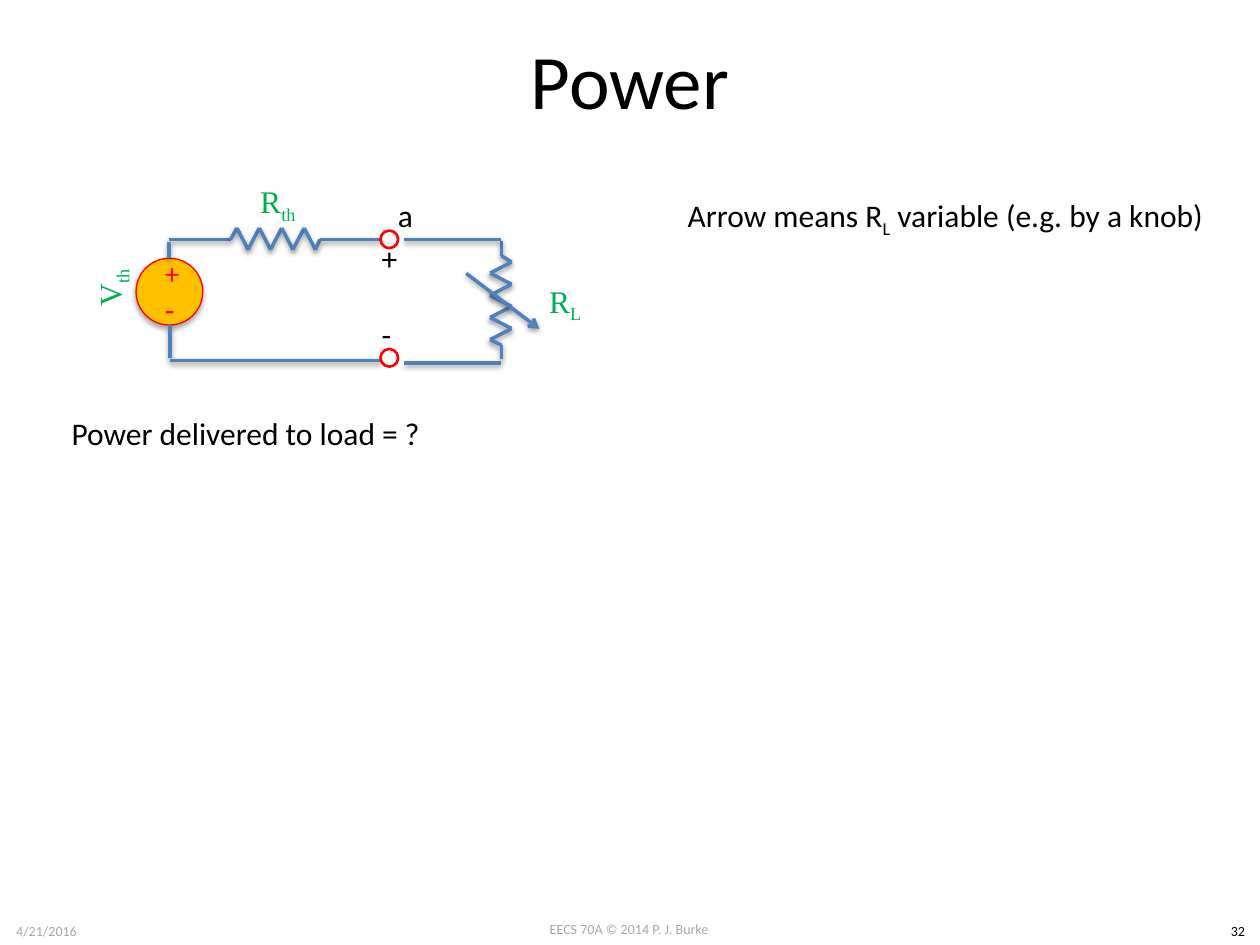
from lxml import etree
from pptx import Presentation
from pptx.dml.color import RGBColor
from pptx.enum.shapes import MSO_CONNECTOR, MSO_SHAPE
from pptx.enum.text import MSO_ANCHOR, MSO_AUTO_SIZE, PP_ALIGN
from pptx.oxml.ns import qn
from pptx.util import Inches, Pt

LEFT, CENTER = PP_ALIGN.LEFT, PP_ALIGN.CENTER
TOP, MIDDLE = MSO_ANCHOR.TOP, MSO_ANCHOR.MIDDLE
FIT, FIXED = MSO_AUTO_SIZE.SHAPE_TO_FIT_TEXT, MSO_AUTO_SIZE.NONE
STRAIGHT, OVAL = MSO_CONNECTOR.STRAIGHT, MSO_SHAPE.OVAL
BLACK, GREY, GREEN, RED = "000000", "A6A6A6", "00B050", "FF0000"
WIRE_BLUE, SOURCE_AMBER = "4F81BD", "FFC000"
SANS, SERIF = "Calibri", "Times New Roman"

deck = Presentation()
deck.slide_width, deck.slide_height = Inches(10), Inches(7.5)
slide = deck.slides.add_slide(deck.slide_layouts[6])
canvas = slide.shapes

# Grid of 100 columns by 75 rows; every length below counts its cells
CELL = deck.slide_width / 100
shadowed = []  # pairs of part and shadow (opacity in %, distance in points)


def write(parent, box, runs, size=18, color=BLACK, font=SANS,
          align=CENTER, anchor=MIDDLE, fit=FIXED, wrap=True):
    """Add a text box; each run is a pair of text and whether it is a subscript."""
    label = parent.add_textbox(*(round(v * CELL) for v in box))
    frame = label.text_frame
    frame.word_wrap, frame.auto_size, frame.vertical_anchor = wrap, fit, anchor
    line = frame.paragraphs[0]
    line.alignment = align
    for text, subscript in runs:
        run = line.add_run()
        run.text = text
        run.font.size, run.font.name = Pt(size), font
        run.font.color.rgb = RGBColor.from_string(color)
        if subscript:
            run._r.get_or_add_rPr().set("baseline", "-25000")
    return label


def wire(parent, *points):
    """Join the points with straight wires and return the last one."""
    for start, end in zip(points, points[1:]):
        segment = parent.add_connector(
            STRAIGHT, *(round(v * CELL) for v in start + end))
        segment.line.color.rgb = RGBColor.from_string(WIRE_BLUE)
        segment.line.width = Pt(2)
        shadowed.append((segment, 38, 1.6))
    return segment


# Footer
for box, text, color in [
    ((38.3, 72.6, 23.3, 2.4), "EECS 70A © 2014 P. J. Burke", GREY),
    ((0, 72.7, 7.4, 2.4), "4/21/2016", GREY),
    ((96.5, 72.7, 3.5, 2.4), "32", BLACK),
]:
    write(canvas, box, [(text, False)], 8, color, anchor=TOP, fit=FIT)

# Title
write(canvas, (5, 0, 90, 12.5), [("Power", False)], 44)

# Thevenin resistor with its leads
thevenin = canvas.add_group_shape().shapes
write(thevenin, (16.1, 12.5, 11.9, 7.3), [("R", False), ("th", True)],
      color=GREEN, font=SERIF)
zigzag = [(18.8 + 0.89 * i, (18.1, 19.8)[i % 2]) for i in range(8)]
wire(thevenin, (13.4, 19), (18.3, 19), *zigzag, (25.4, 19), (30.3, 19))

# Voltage source with polarity signs
source = canvas.add_group_shape().shapes
circle = source.add_shape(OVAL, *(round(v * CELL) for v in (10.8, 20.5, 5.3, 5.3)))
circle.fill.solid()
circle.fill.fore_color.rgb = RGBColor.from_string(SOURCE_AMBER)
circle.line.color.rgb = RGBColor.from_string(RED)
circle.line.width = Pt(0.75)
shadowed.append((circle, 35, 1.8))
for row, sign, size in [(20, "+", 16.6), (22.9, "-", 18)]:
    write(source, (12.1, row, 2.6, 3.3), [(sign, False)], size, RED)

# Wires around the source
wire(canvas, (13.5, 28.4), (13.5, 25.8))
wire(canvas, (13.4, 20.5), (13.4, 19.2))
source_label = write(canvas, (2.9, 19.2, 11.9, 7.3), [("V", False), ("th", True)],
                     color=GREEN, font=SERIF)
source_label.rotation = 270
wire(canvas, (13.5, 28.6), (30.3, 28.6))

# Open terminals
for row in (18.3, 27.7):
    terminal = canvas.add_shape(OVAL, *(round(v * CELL) for v in (30.2, row, 1.4, 1.4)))
    terminal.shadow.inherit = False
    terminal.fill.background()
    terminal.line.color.rgb = RGBColor.from_string(RED)
    terminal.line.width = Pt(1.5)

# Terminal labels
for box, text in [
    ((30.6, 15.1, 3.2, 4), "a"),
    ((29.3, 18.5, 3.3, 4), "+"),
    ((29.3, 24.5, 2.8, 4), "-"),
]:
    write(canvas, box, [(text, False)], align=LEFT, anchor=TOP, fit=FIT, wrap=False)

# Load resistor with its leads
write(canvas, (38.9, 20.4, 11.9, 7.3), [("R", False), ("L", True)],
      color=GREEN, font=SERIF)
load = canvas.add_group_shape().shapes
zigzag = [((40.6, 38.9)[i % 2], 20.8 + 0.88 * i) for i in range(8)]
wire(load, (39.8, 19.1), (39.8, 20.3), *zigzag, (39.8, 27.4), (39.8, 28.5))
for row in (19, 28.8):
    wire(canvas, (39.8, row), (32.1, row))

# Arrow marking the load as variable
arrow = wire(canvas, (37, 21.7), (42.8, 26.1))
etree.SubElement(arrow._element.spPr.find(qn("a:ln")), qn("a:tailEnd"), type="arrow")

# Remarks
for box, runs in [
    ((53.6, 15.1, 43.5, 4), [("Arrow means R", False), ("L", True),
                             (" variable (e.g. by a knob)", False)]),
    ((4.7, 32.4, 30, 4), [("Power delivered to load = ?", False)]),
]:
    write(canvas, box, runs, align=LEFT, anchor=TOP, fit=FIT, wrap=False)

# Soft shadows straight below the wires and the source
for part, opacity, distance in shadowed:
    effects = etree.SubElement(part._element.spPr, qn("a:effectLst"))
    shadow = etree.SubElement(
        effects, qn("a:outerShdw"), blurRad=str(Pt(3.1)), dist=str(Pt(distance)),
        dir="5400000", rotWithShape="0")
    tint = etree.SubElement(shadow, qn("a:srgbClr"), val=BLACK)
    etree.SubElement(tint, qn("a:alpha"), val=str(opacity * 1000))

deck.save("out.pptx")
